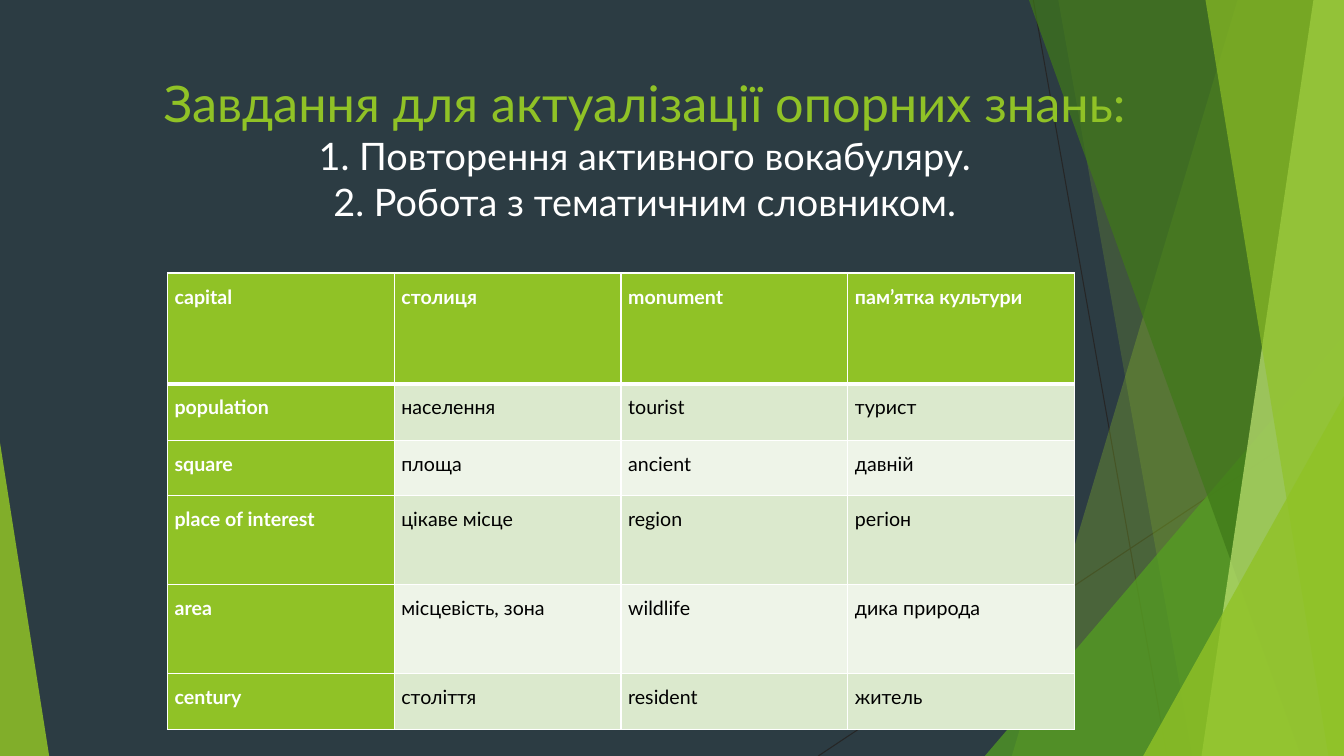
from lxml.etree import SubElement
from pptx import Presentation
from pptx.dml.color import RGBColor
from pptx.enum.shapes import MSO_CONNECTOR, MSO_SHAPE
from pptx.enum.text import MSO_ANCHOR, MSO_AUTO_SIZE, PP_ALIGN
from pptx.oxml.ns import qn
from pptx.util import Cm, Pt

WIDTH, HEIGHT = 33.87, 19.05
FONT = "Lato"
GREEN, WHITE, BLACK = "90C226", "FFFFFF", "000000"
BANDS = ["EEF4E8", "DBE9CD"]

HEADING = "Завдання для актуалізації опорних знань:"
TASKS = ["1. Повторення активного вокабуляру.", "2. Робота з тематичним словником."]
VOCABULARY = [
    ["capital", "столиця", "monument", "пам’ятка культури"],
    ["population", "населення", "tourist", "турист"],
    ["square", "площа", "ancient", "давній"],
    ["place of interest", "цікаве місце", "region", "регіон"],
    ["area", "місцевість, зона", "wildlife", "дика природа"],
    ["century", "століття", "resident", "житель"],
]
ROW_HEIGHTS = [2.79, 1.42, 1.4, 2.24, 2.24, 1.42]


def paint(fill, colour, opacity=100):
    fill.solid()
    fill.fore_color.rgb = RGBColor.from_string(colour)
    if opacity < 100:
        colour_element = fill._xPr.find(qn("a:solidFill"))[0]
        SubElement(colour_element, qn("a:alpha"), val=str(opacity * 1000))


def set_font(font, size, colour, bold=False):
    font.name, font.size, font.bold = FONT, Pt(size), bold
    paint(font.fill, colour)


def add_backdrop(slide, left, top, width, height):
    right, bottom = left + width, top + height

    def add_line(x1, y1, x2, y2):
        line = slide.shapes.add_connector(
            MSO_CONNECTOR.STRAIGHT,
            Cm(left + x1), Cm(top + y1), Cm(left + x2), Cm(top + y2))
        line.line.width = Pt(0.75)
        paint(line.line.fill, "262626")
        SubElement(line.element.spPr, qn("a:effectLst"))

    def finish(shape, colour, opacity):
        paint(shape.fill, colour, opacity)
        shape.line.fill.background()
        shape.shadow.inherit = False

    # A facet runs from its slanted left edge to the right edge of the slide
    def add_facet(top_x, bottom_x, colour, opacity):
        builder = slide.shapes.build_freeform(Cm(left + top_x), Cm(top))
        builder.add_line_segments([
            (Cm(right), Cm(top)), (Cm(right), Cm(bottom)),
            (Cm(left + bottom_x), Cm(bottom))])
        finish(builder.convert_to_shape(), colour, opacity)

    # A corner stands on the bottom edge, with its apex at the slide's side
    def add_corner(x, corner_width, corner_height, apex, colour, opacity):
        corner = slide.shapes.add_shape(
            MSO_SHAPE.ISOSCELES_TRIANGLE, Cm(x), Cm(bottom - corner_height),
            Cm(corner_width), Cm(corner_height))
        corner.adjustments[0] = apex
        finish(corner, colour, opacity)

    add_line(26.04, 0, 29.41, height)
    add_line(width, 10.24, 20.62, height)
    add_facet(31.19, 25.5, GREEN, 30)
    add_facet(26.67, 30.05, GREEN, 20)
    add_corner(right - 9.05, 9.05, 10.59, 1, "54A021", 72)
    add_facet(25.93, 32.79, "3F7819", 70)
    add_facet(33.1, 30.28, "C0E474", 70)
    add_facet(30.38, 33.48, GREEN, 65)
    add_corner(right - 5.06, 5.06, 9.07, 1, GREEN, 80)
    add_corner(left, 1.24, 7.9, 0, GREEN, 85)


def add_title(slide, left, top, width, height):
    title = slide.shapes.title
    title.left, title.top = Cm(left), Cm(top)
    title.width, title.height = Cm(width), Cm(height)
    frame = title.text_frame
    frame.word_wrap = True
    frame.auto_size = MSO_AUTO_SIZE.NONE
    frame.vertical_anchor = MSO_ANCHOR.TOP
    paragraph = frame.paragraphs[0]
    paragraph.alignment = PP_ALIGN.CENTER
    set_font(paragraph.font, 27, WHITE)
    heading = paragraph.add_run()
    heading.text = HEADING
    set_font(heading.font, 36, GREEN)
    for task in TASKS:
        paragraph.add_line_break()
        run = paragraph.add_run()
        run.text = task
        set_font(run.font, 27, WHITE)
    # Bring the title in front of the backdrop
    title.element.getparent().append(title.element)


def set_borders(cell, widths):
    properties = cell._tc.get_or_add_tcPr()
    for position, (side, points) in enumerate(widths.items()):
        border = properties.makeelement(qn(f"a:{side}"), {"w": str(Pt(points))})
        fill = SubElement(border, qn("a:solidFill"))
        SubElement(fill, qn("a:srgbClr"), val=WHITE)
        properties.insert(position, border)


def add_vocabulary(slide, left, top, width, height):
    table = slide.shapes.add_table(
        len(VOCABULARY), len(VOCABULARY[0]),
        Cm(left), Cm(top), Cm(width), Cm(height)).table
    table.horz_banding = False
    table.first_row = False
    for row, row_height in zip(table.rows, ROW_HEIGHTS):
        row.height = Cm(row_height)
    for row_index, words in enumerate(VOCABULARY):
        for column_index, word in enumerate(words):
            cell = table.cell(row_index, column_index)
            is_heading = row_index == 0 or column_index == 0
            paint(cell.fill, GREEN if is_heading else BANDS[row_index % 2])
            cell.margin_left = cell.margin_right = Cm(0.18)
            cell.margin_top = cell.margin_bottom = 0
            set_borders(cell, {
                "lnL": 1, "lnR": 1,
                "lnT": 3 if row_index == 1 else 1,
                "lnB": 3 if row_index == 0 else 1})
            paragraph = cell.text_frame.paragraphs[0]
            paragraph.text = word
            paragraph.alignment = PP_ALIGN.JUSTIFY
            paragraph.line_spacing = 1.5
            set_font(paragraph.font, 14, WHITE if is_heading else BLACK, is_heading)


def main():
    presentation = Presentation()
    presentation.slide_width, presentation.slide_height = Cm(WIDTH), Cm(HEIGHT)
    slide = presentation.slides.add_slide(presentation.slide_layouts[5])
    paint(slide.background.fill, "2C3C43")
    add_backdrop(slide, 0, 0, WIDTH, HEIGHT)
    add_title(slide, 1.88, 1.7, 28.73, 4.8)
    add_vocabulary(slide, 4.22, 6.88, 22.86, sum(ROW_HEIGHTS))
    presentation.save("out.pptx")


if __name__ == "__main__":
    main()
